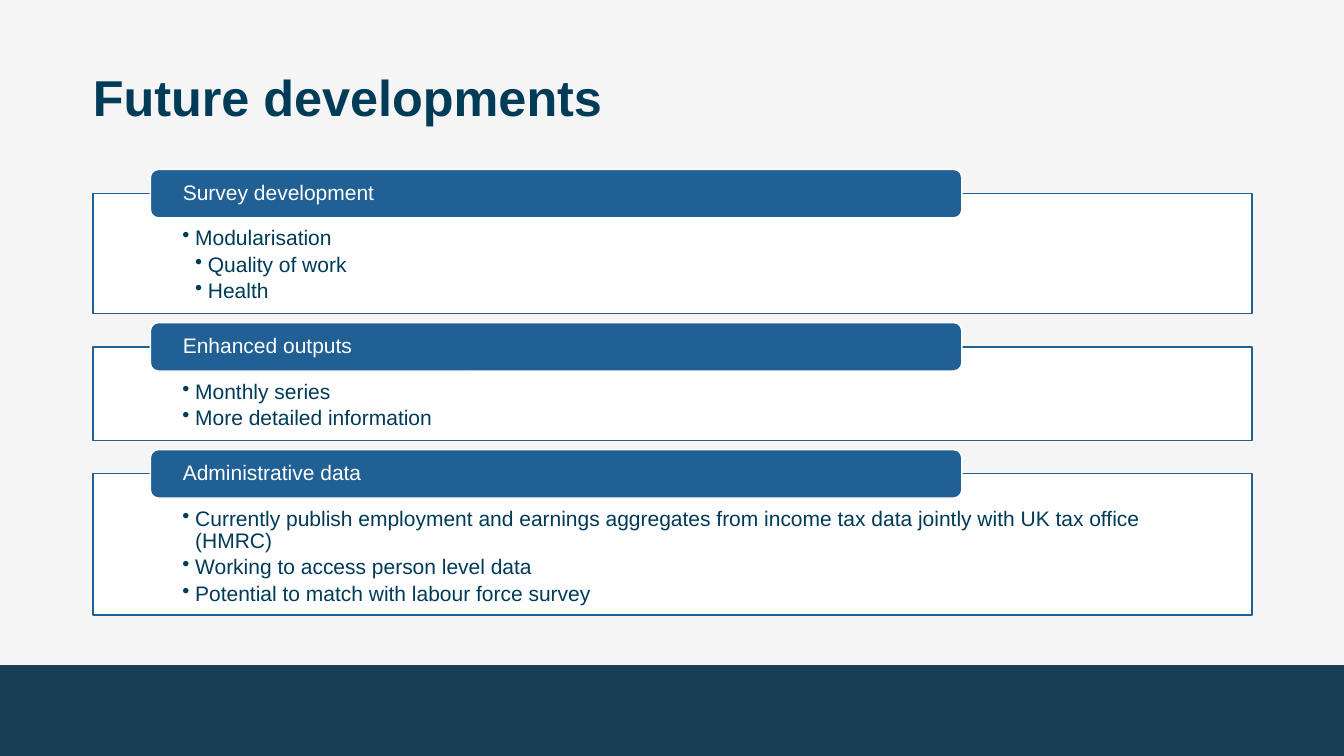
from dataclasses import dataclass

from lxml import etree
from pptx import Presentation
from pptx.dml.color import RGBColor
from pptx.enum.shapes import MSO_SHAPE
from pptx.enum.text import MSO_ANCHOR, MSO_AUTO_SIZE, PP_ALIGN
from pptx.oxml.ns import qn
from pptx.util import Cm, Pt

RECTANGLE = MSO_SHAPE.RECTANGLE
ROUNDED_RECTANGLE = MSO_SHAPE.ROUNDED_RECTANGLE
TOP = MSO_ANCHOR.TOP
MIDDLE = MSO_ANCHOR.MIDDLE
LEFT = PP_ALIGN.LEFT
NO_AUTOSIZE = MSO_AUTO_SIZE.NONE

BACKGROUND = "F5F5F6"
FOOTER = "183E56"
TITLE = "003C57"
BODY_TEXT = "003B57"
BLUE = "206095"
WHITE = "FFFFFF"

SLIDE_WIDTH, SLIDE_HEIGHT = 33.87, 19.05
FOOTER_HEIGHT = 2.29
MARGIN, CONTENT_WIDTH = 2.34, 29.21
FIRST_PANEL_TOP, PANEL_GAP = 4.88, 0.84
HEADING_LEFT, HEADING_WIDTH, HEADING_HEIGHT = 3.79, 20.45, 1.22
BULLET_INDENT = 0.32


@dataclass(frozen=True)
class Bullet:
    text: str
    level: int = 1


@dataclass(frozen=True)
class Section:
    heading: str
    height: float
    bullets: tuple[Bullet, ...]


SECTIONS = (
    Section("Survey development", 3.02, (
        Bullet("Modularisation"),
        Bullet("Quality of work", 2),
        Bullet("Health", 2),
    )),
    Section("Enhanced outputs", 2.36, (
        Bullet("Monthly series"),
        Bullet("More detailed information"),
    )),
    Section("Administrative data", 3.56, (
        Bullet("Currently publish employment and earnings aggregates from income tax data "
               "jointly with UK tax office (HMRC)"),
        Bullet("Working to access person level data"),
        Bullet("Potential to match with labour force survey"),
    )),
)


def colour(value: str) -> RGBColor:
    return RGBColor.from_string(value)


def add_box(slide, kind, left: float, top: float, width: float, height: float,
            fill: str, line: str | None = None):
    shape = slide.shapes.add_shape(kind, Cm(left), Cm(top), Cm(width), Cm(height))
    shape.shadow.inherit = False
    shape.fill.solid()
    shape.fill.fore_color.rgb = colour(fill)
    if line:
        shape.line.color.rgb = colour(line)
        shape.line.width = Pt(1)
    else:
        shape.line.fill.background()
    return shape


def set_frame(text_frame, anchor, side: float = 0, top: float = 0, bottom: float = 0) -> None:
    text_frame.word_wrap = True
    text_frame.auto_size = NO_AUTOSIZE
    text_frame.vertical_anchor = anchor
    text_frame.margin_left = text_frame.margin_right = Cm(side)
    text_frame.margin_top = Cm(top)
    text_frame.margin_bottom = Cm(bottom)


def set_paragraph(paragraph, text: str, size: float, text_colour: str,
                  spacing: float = 0.9, after: float = 0, bold: bool = False) -> None:
    paragraph.text = text
    paragraph.alignment = LEFT
    paragraph.line_spacing = spacing
    paragraph.space_before = Pt(0)
    paragraph.space_after = Pt(after)
    for run in paragraph.runs:
        run.font.name = "Arial"
        run.font.size = Pt(size)
        run.font.bold = bold
        run.font.color.rgb = colour(text_colour)


def set_bullet(paragraph, level: int) -> None:
    paragraph.level = level
    properties = paragraph._p.get_or_add_pPr()
    properties.set("marL", str(Cm(BULLET_INDENT * level)))
    properties.set("indent", str(-Cm(BULLET_INDENT)))
    etree.SubElement(properties, qn("a:buChar"), char="•")


def set_opacity(shape, percent: int) -> None:
    fill_colour = shape._element.spPr.find(qn("a:solidFill"))[0]
    etree.SubElement(fill_colour, qn("a:alpha"), val=str(percent * 1000))


def add_section(slide, section: Section, top: float) -> None:
    panel = add_box(slide, RECTANGLE, MARGIN, top, CONTENT_WIDTH, section.height, WHITE, BLUE)
    set_opacity(panel, 90)
    text_frame = panel.text_frame
    set_frame(text_frame, TOP, side=2.26, top=0.86, bottom=0.3)
    for index, bullet in enumerate(section.bullets):
        paragraph = text_frame.add_paragraph() if index else text_frame.paragraphs[0]
        set_paragraph(paragraph, bullet.text, 15, BODY_TEXT, after=2.5)
        set_bullet(paragraph, bullet.level)

    heading = add_box(slide, ROUNDED_RECTANGLE, HEADING_LEFT, top - HEADING_HEIGHT / 2,
                      HEADING_WIDTH, HEADING_HEIGHT, BLUE, WHITE)
    set_frame(heading.text_frame, MIDDLE, side=0.76)
    set_paragraph(heading.text_frame.paragraphs[0], section.heading, 15, WHITE)


def add_title(slide, text: str) -> None:
    title = slide.shapes.title
    title.left, title.top = Cm(MARGIN), Cm(1.78)
    title.width, title.height = Cm(CONTENT_WIDTH), Cm(1.47)
    set_frame(title.text_frame, TOP)
    set_paragraph(title.text_frame.paragraphs[0], text, 36, TITLE, spacing=0.95, bold=True)


def main() -> None:
    presentation = Presentation()
    presentation.slide_width = Cm(SLIDE_WIDTH)
    presentation.slide_height = Cm(SLIDE_HEIGHT)
    slide = presentation.slides.add_slide(presentation.slide_layouts.get_by_name("Title Only"))
    slide.background.fill.solid()
    slide.background.fill.fore_color.rgb = colour(BACKGROUND)

    add_box(slide, RECTANGLE, 0, SLIDE_HEIGHT - FOOTER_HEIGHT, SLIDE_WIDTH, FOOTER_HEIGHT, FOOTER)
    add_title(slide, "Future developments")
    top = FIRST_PANEL_TOP
    for section in SECTIONS:
        add_section(slide, section, top)
        top += section.height + PANEL_GAP

    presentation.save("out.pptx")


if __name__ == "__main__":
    main()
